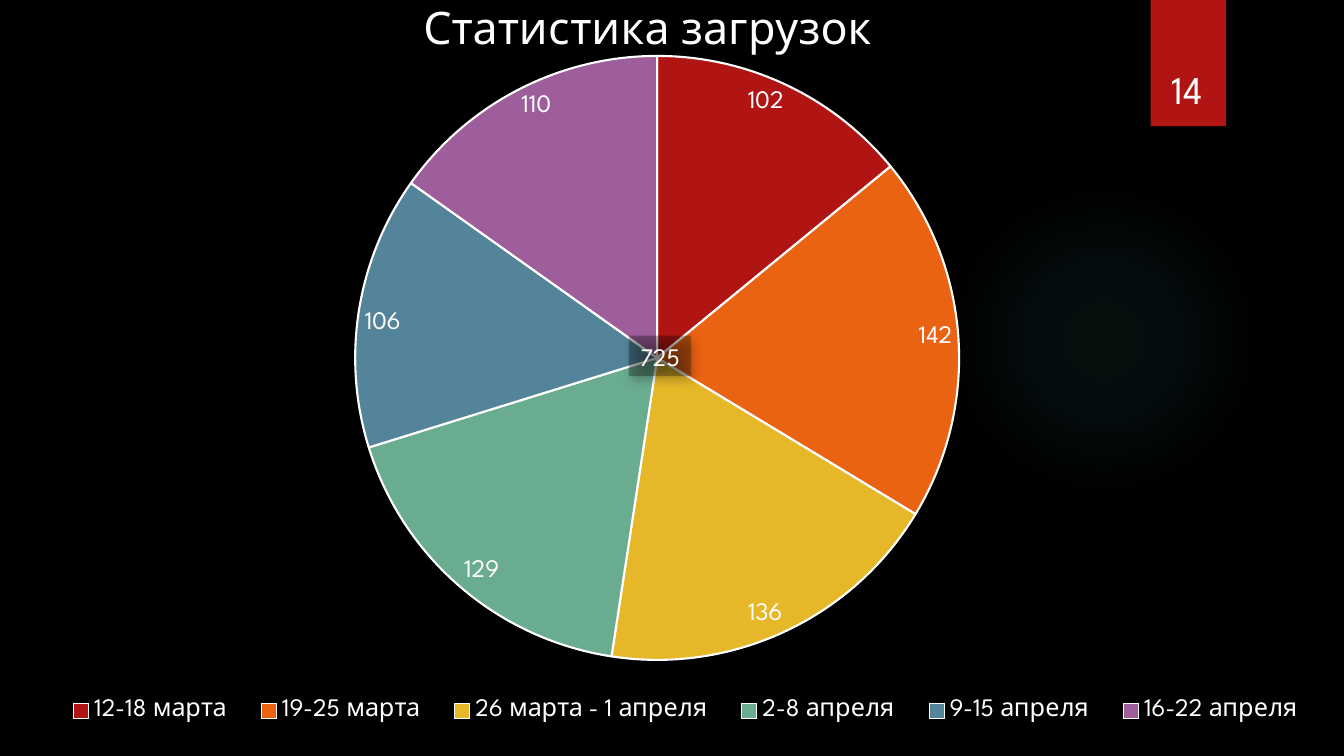
import pptx
import pptx.chart.data
import pptx.dml.color
import pptx.enum.chart
import pptx.enum.shapes
import pptx.enum.text
import pptx.oxml
import pptx.oxml.ns
import pptx.util
from pptx.dml.color import RGBColor
from pptx.util import Cm, Pt

TITLE = "Статистика загрузок"
SLIDE_NUMBER = "14"
BLACK = RGBColor(0x00, 0x00, 0x00)
WHITE = RGBColor(0xFF, 0xFF, 0xFF)
RED = RGBColor(0xB0, 0x15, 0x13)
GLOW = RGBColor(0x50, 0xB9, 0xC1)
DOWNLOADS = [
    ("12-18 марта", 102, RED),
    ("19-25 марта", 142, RGBColor(0xEA, 0x63, 0x12)),
    ("26 марта - 1 апреля", 136, RGBColor(0xE6, 0xB7, 0x29)),
    ("2-8 апреля", 129, RGBColor(0x6A, 0xAC, 0x90)),
    ("9-15 апреля", 106, RGBColor(0x54, 0x84, 0x9A)),
    ("16-22 апреля", 110, RGBColor(0x9E, 0x5E, 0x9B)),
]
TOTAL = sum(count for _, count, _ in DOWNLOADS)
GLOW_STOPS = [(0, 7), (36, 6), (69, 0)]  # position and opacity, percent
# Shares of the chart's width and height
PLOT_AREA = {"x": 0.264, "y": 0.074, "w": 0.45, "h": 0.799}
TITLE_AREA = {"x": 0.309, "y": -0.009}
LEGEND_AREA = {"x": 0.035, "y": 0.905, "w": 0.95, "h": 0.07}
FONT = "League Spartan"
SLIDE_WIDTH, SLIDE_HEIGHT = Cm(33.87), Cm(19.05)
A_NS = pptx.oxml.ns.nsdecls("a")
C_NS = pptx.oxml.ns.nsdecls("c")


def set_font(font, size):
    font.name = FONT
    font.size = Pt(size)
    font.color.rgb = WHITE


def add_plain_shape(slide, kind, left, top, width, height, color):
    shape = slide.shapes.add_shape(kind, Cm(left), Cm(top), Cm(width), Cm(height))
    shape.shadow.inherit = False
    shape.fill.solid()
    shape.fill.fore_color.rgb = color
    shape.line.fill.background()
    return shape


def add_shadow(shape, opacity, blur, distance, angle):
    shape._element.spPr.find(pptx.oxml.ns.qn("a:effectLst")).append(pptx.oxml.parse_xml(
        f'<a:outerShdw {A_NS} blurRad="{Pt(blur)}" dist="{Pt(distance)}" dir="{angle * 60000}" '
        f'rotWithShape="0"><a:srgbClr val="{BLACK}"><a:alpha val="{opacity * 1000}"/>'
        "</a:srgbClr></a:outerShdw>"))


def write_text(shape, text, size, anchor, wrap):
    frame = shape.text_frame
    frame.word_wrap = wrap
    frame.vertical_anchor = anchor
    paragraph = frame.paragraphs[0]
    paragraph.text = text
    paragraph.alignment = pptx.enum.text.PP_ALIGN.CENTER
    set_font(paragraph.font, size)


def add_glow(slide):
    glow = add_plain_shape(slide, pptx.enum.shapes.MSO_SHAPE.OVAL, 23.9, 4.65, 7.82, 7.82, GLOW)
    stops = "".join(
        f'<a:gs pos="{position * 1000}"><a:srgbClr val="{GLOW}">'
        f'<a:alpha val="{opacity * 1000}"/></a:srgbClr></a:gs>'
        for position, opacity in GLOW_STOPS)
    properties = glow._element.spPr
    properties.replace(properties.find(pptx.oxml.ns.qn("a:solidFill")), pptx.oxml.parse_xml(
        f'<a:gradFill {A_NS}><a:gsLst>{stops}</a:gsLst><a:path path="circle">'
        '<a:fillToRect l="50000" t="50000" r="50000" b="50000"/></a:path></a:gradFill>'))


def add_number_tab(slide):
    tab = add_plain_shape(slide, pptx.enum.shapes.MSO_SHAPE.RECTANGLE, 29, 0, 1.9, 3.18, RED)
    add_shadow(tab, 45, 3, 2, 90)
    number = slide.shapes.add_textbox(Cm(28.75), Cm(0.83), Cm(2.34), Cm(2.13))
    write_text(number, SLIDE_NUMBER, 28, pptx.enum.text.MSO_ANCHOR.BOTTOM, True)


def place_chart_part(element, area, index, target=""):
    """Fix a chart part at an area; index is where its layout belongs among the children."""
    for layout in element.findall(pptx.oxml.ns.qn("c:layout")):
        element.remove(layout)
    modes = '<c:xMode val="edge"/><c:yMode val="edge"/>'
    sizes = "".join(f'<c:{side} val="{share}"/>' for side, share in area.items())
    element.insert(index, pptx.oxml.parse_xml(
        f"<c:layout {C_NS}><c:manualLayout>{target}{modes}{sizes}"
        "</c:manualLayout></c:layout>"))


def add_download_pie(slide):
    data = pptx.chart.data.CategoryChartData()
    data.categories = [week for week, _, _ in DOWNLOADS]
    data.add_series(TITLE, [count for _, count, _ in DOWNLOADS])
    chart = slide.shapes.add_chart(
        pptx.enum.chart.XL_CHART_TYPE.PIE, 0, 0, SLIDE_WIDTH, SLIDE_HEIGHT, data).chart
    set_font(chart.font, 10)

    chart.has_title = True
    chart.chart_title.include_in_layout = False
    title = chart.chart_title.text_frame.paragraphs[0]
    title.text = TITLE
    set_font(title.font, 32)
    title.font.bold = False

    chart.has_legend = True
    chart.legend.position = pptx.enum.chart.XL_LEGEND_POSITION.BOTTOM
    chart.legend.include_in_layout = False
    set_font(chart.legend.font, 18)

    plot = chart.plots[0]
    plot.vary_by_categories = True
    plot.has_data_labels = True
    labels = plot.data_labels
    labels.show_value = True
    labels.show_percentage = False
    labels.position = pptx.enum.chart.XL_LABEL_POSITION.INSIDE_END
    set_font(labels.font, 18)
    for index, (_, _, color) in enumerate(DOWNLOADS):
        slice_format = plot.series[0].points[index].format
        slice_format.fill.solid()
        slice_format.fill.fore_color.rgb = color
        slice_format.line.color.rgb = WHITE
        slice_format.line.width = Pt(1.5)

    place_chart_part(chart._chartSpace.chart.plotArea, PLOT_AREA, 0,
                     '<c:layoutTarget val="inner"/>')
    place_chart_part(chart.chart_title._element, TITLE_AREA, 1)
    place_chart_part(chart.legend._element, LEGEND_AREA, 1)


def add_total(slide):
    total = add_plain_shape(
        slide, pptx.enum.shapes.MSO_SHAPE.RECTANGLE, 15.85, 8.46, 1.57, 1.02, BLACK)
    color = total._element.spPr.find(".//" + pptx.oxml.ns.qn("a:srgbClr"))
    color.append(pptx.oxml.parse_xml(f'<a:alpha {A_NS} val="29000"/>'))
    add_shadow(total, 72, 7, 4, 61)
    write_text(total, str(TOTAL), 18, pptx.enum.text.MSO_ANCHOR.MIDDLE, False)


def main():
    presentation = pptx.Presentation()
    presentation.slide_width, presentation.slide_height = SLIDE_WIDTH, SLIDE_HEIGHT
    slide = presentation.slides.add_slide(presentation.slide_layouts[6])
    slide.background.fill.solid()
    slide.background.fill.fore_color.rgb = BLACK
    add_glow(slide)
    add_number_tab(slide)
    add_download_pie(slide)
    add_total(slide)
    presentation.save("out.pptx")


if __name__ == "__main__":
    main()
